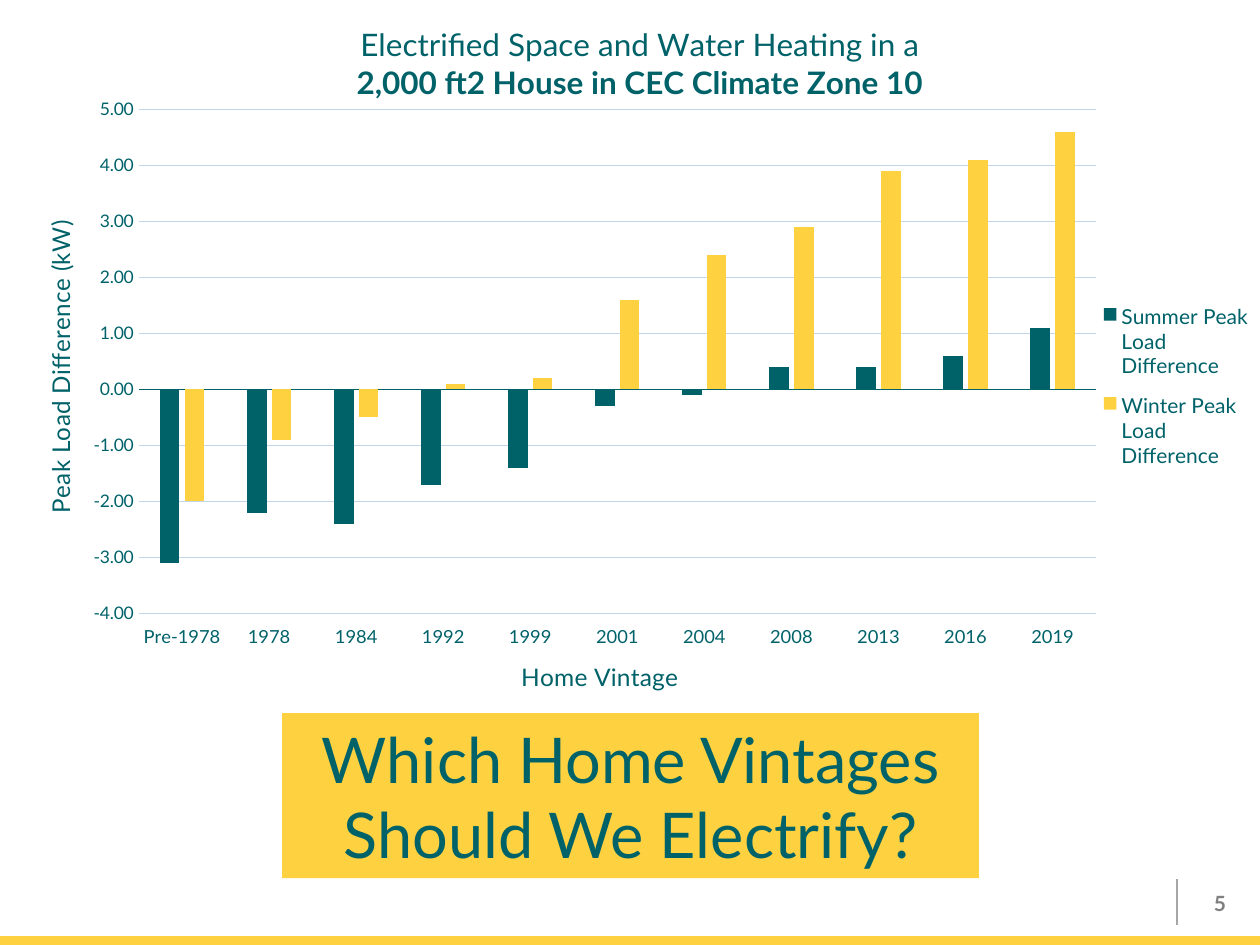
import pptx
import pptx.chart.data
import pptx.dml.color
import pptx.enum.chart
import pptx.enum.shapes
import pptx.enum.text
import pptx.oxml
import pptx.oxml.ns
import pptx.util
from pptx.util import Inches

TEAL, YELLOW, GRID, RULE, GREY = "006269", "FED141", "C2D6E9", "A6A6A6", "808080"
ALIGN = pptx.enum.text.PP_ALIGN
SHAPES = pptx.enum.shapes
CHART = pptx.enum.chart
qn = pptx.oxml.ns.qn


def rgb(value):
    return pptx.dml.color.RGBColor.from_string(value)


def place(element, target, **fractions):
    for stale in element.findall(qn("c:layout")):
        element.remove(stale)
    settings = [("layoutTarget", target)] if target else []
    settings += [(f"{axis}Mode", "edge") for axis in "xy"]
    settings += fractions.items()
    body = "".join(f'<c:{name} val="{value}"/>' for name, value in settings)
    layout = pptx.oxml.parse_xml(
        f'<c:layout {pptx.oxml.ns.nsdecls("c")}>'
        f"<c:manualLayout>{body}</c:manualLayout></c:layout>"
    )
    overlay = element.find(qn("c:overlay"))
    if overlay is None:
        element.insert(0, layout)
    else:
        overlay.addprevious(layout)


class Page:
    def __init__(self, slide, font_name="Lato"):
        self.slide = slide
        self.font_name = font_name

    def style(self, font, size, color=TEAL, bold=False):
        font.name = self.font_name
        font.size = pptx.util.Pt(size)
        font.bold = bold
        font.color.rgb = rgb(color)

    def fill_text(self, frame, text, size, align, color=TEAL, bold=False):
        frame.word_wrap = True
        paragraph = frame.paragraphs[0]
        paragraph.text = text
        paragraph.alignment = align
        self.style(paragraph.font, size, color, bold)

    def band(self, box, fill):
        band = self.slide.shapes.add_shape(
            SHAPES.MSO_SHAPE.RECTANGLE, *map(Inches, box))
        band.shadow.inherit = False
        band.fill.solid()
        band.fill.fore_color.rgb = rgb(fill)
        band.line.fill.background()
        return band

    def rule(self, x, top, bottom, color):
        rule = self.slide.shapes.add_connector(
            SHAPES.MSO_CONNECTOR.STRAIGHT,
            Inches(x), Inches(top), Inches(x), Inches(bottom))
        rule.line.color.rgb = rgb(color)
        rule.line.width = pptx.util.Pt(1)
        rule._element.spPr.append(pptx.oxml.parse_xml(
            f'<a:effectLst {pptx.oxml.ns.nsdecls("a")}/>'))

    def label(self, box, text, size, align, color, bold):
        label = self.slide.shapes.add_textbox(*map(Inches, box))
        label.text_frame.vertical_anchor = pptx.enum.text.MSO_ANCHOR.MIDDLE
        self.fill_text(label.text_frame, text, size, align, color, bold)

    def chart_title(self, title, lines, size, x, y):
        frame = title.text_frame
        for index, (text, bold) in enumerate(lines):
            paragraph = frame.add_paragraph() if index else frame.paragraphs[0]
            paragraph.text = text
            self.style(paragraph.font, size, bold=bold)
        place(title._element, None, x=x, y=y)

    def axis(self, axis, title, size, x, y):
        self.chart_title(axis.axis_title, [(title, False)], 14, x, y)
        axis.major_tick_mark = CHART.XL_TICK_MARK.NONE
        axis.minor_tick_mark = CHART.XL_TICK_MARK.NONE
        self.style(axis.tick_labels.font, size)

    def column_chart(self, box, categories, series):
        data = pptx.chart.data.CategoryChartData(number_format="0.00")
        data.categories = categories
        for name, values, _ in series:
            data.add_series(name, values)
        chart = self.slide.shapes.add_chart(
            CHART.XL_CHART_TYPE.COLUMN_CLUSTERED, *map(Inches, box), data).chart
        self.style(chart.font, 10)
        plot = chart.plots[0]
        plot.gap_width, plot.overlap = 219, -27
        plot.vary_by_categories = False
        for bars, (_, _, color) in zip(plot.series, series):
            bars.invert_if_negative = False
            bars.format.fill.solid()
            bars.format.fill.fore_color.rgb = rgb(color)
        chart.has_legend = True
        chart.legend.position = CHART.XL_LEGEND_POSITION.RIGHT
        chart.legend.include_in_layout = False
        self.style(chart.legend.font, 12)
        return chart


def main():
    deck = pptx.Presentation()
    deck.slide_width, deck.slide_height = Inches(10), Inches(7.5)
    page = Page(deck.slides.add_slide(deck.slide_layouts[6]))

    page.rule(9.34, 6.98, 7.34, RULE)
    page.band((0, 7.43, 10, 0.08), YELLOW)
    page.label((9.27, 6.97, 0.56, 0.4), "5", 12, ALIGN.RIGHT, GREY, True)
    question = page.band((2.24, 5.66, 5.53, 1.31), YELLOW)
    page.fill_text(question.text_frame, "Which Home Vintages Should We Electrify?",
                   36, ALIGN.CENTER)

    vintages = ["Pre-1978", "1978", "1984", "1992", "1999", "2001",
                "2004", "2008", "2013", "2016", "2019"]
    summer = [-3.1, -2.2, -2.4, -1.7, -1.4, -0.3, -0.1, 0.4, 0.4, 0.6, 1.1]
    winter = [-2, -0.9, -0.5, 0.1, 0.2, 1.6, 2.4, 2.9, 3.9, 4.1, 4.6]
    loads = page.column_chart((0, -0.01, 10, 5.56), vintages, [
        ("Summer Peak Load Difference", summer, TEAL),
        ("Winter Peak Load Difference", winter, YELLOW),
    ])
    page.chart_title(loads.chart_title, [
        ("Electrified Space and Water Heating in a", False),
        ("2,000 ft2 House in CEC Climate Zone 10", True),
    ], 18, 0.28, 0.03)

    vintage_axis, load_axis = loads.category_axis, loads.value_axis
    page.axis(vintage_axis, "Home Vintage", 10.5, 0.41, 0.95)
    vintage_axis.tick_label_position = CHART.XL_TICK_LABEL_POSITION.LOW
    vintage_axis.format.line.color.rgb = rgb(TEAL)
    vintage_axis.format.line.width = pptx.util.Pt(0.75)

    page.axis(load_axis, "Peak Load Difference (kW)", 10, 0.03, 0.32)
    load_axis.minimum_scale, load_axis.maximum_scale = -4, 5
    load_axis.major_unit = 1
    load_axis.tick_labels.number_format = "0.00"
    load_axis.tick_labels.number_format_is_linked = False
    load_axis.format.line.fill.background()
    load_axis.major_gridlines.format.line.color.rgb = rgb(GRID)
    load_axis.major_gridlines.format.line.width = pptx.util.Pt(0.75)

    plot_area = loads._chartSpace.find(f'{qn("c:chart")}/{qn("c:plotArea")}')
    place(plot_area, "inner", x=0.11, y=0.16, w=0.76, h=0.73)
    place(loads.legend._element, None, x=0.88, y=0.42, w=0.12, h=0.28)

    deck.save("out.pptx")


if __name__ == "__main__":
    main()
